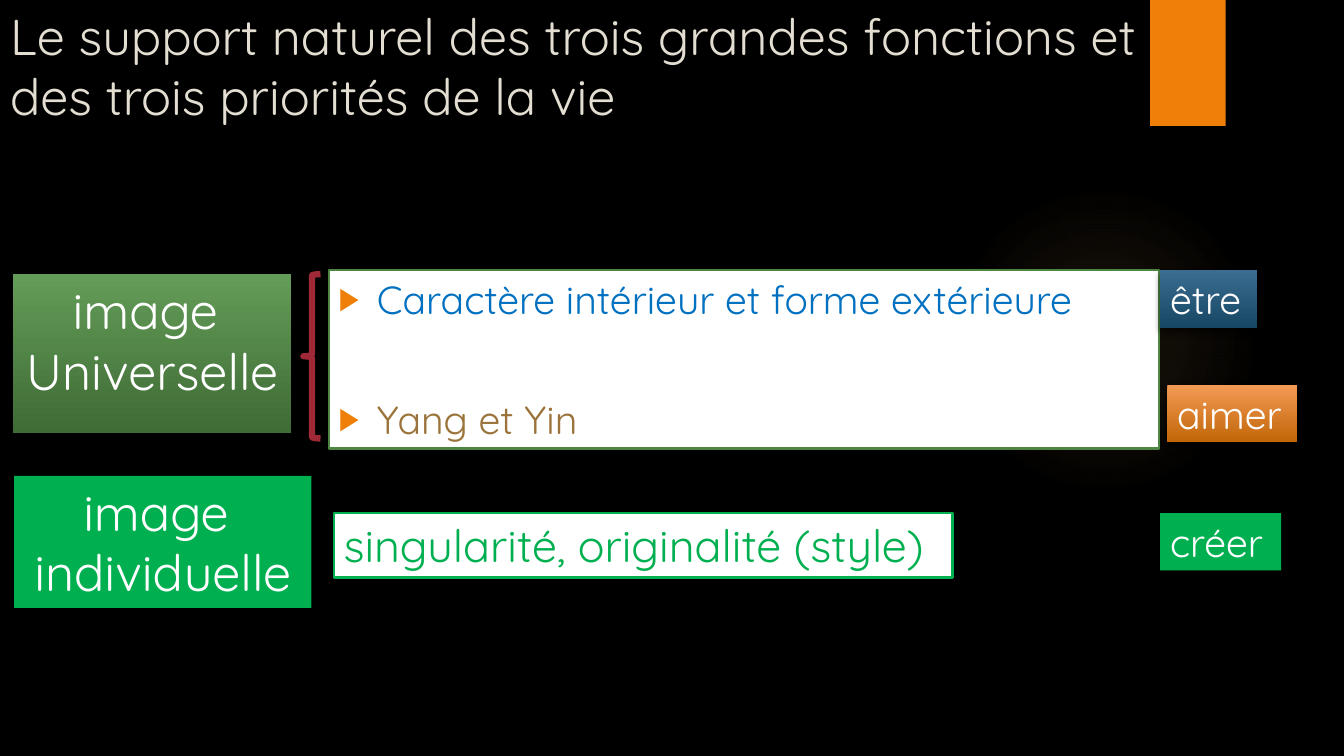
from lxml.etree import SubElement
from pptx import Presentation
from pptx.dml.color import RGBColor
from pptx.enum.shapes import MSO_SHAPE as Preset
from pptx.enum.text import MSO_ANCHOR as Anchor, MSO_AUTO_SIZE as AutoSize, PP_ALIGN as Align
from pptx.oxml import parse_xml
from pptx.oxml.ns import nsdecls, qn
from pptx.util import Inches, Pt

# Grid of squares, 133.3 columns by 75 rows
CELL = Inches(0.1)
COLUMNS, ROWS = 133.33, 75
BADGE_LEFT, BADGE_HEIGHT = 115.1, 5.7
UNIVERSAL_TOP, INDIVIDUAL_TOP = 27.2, 50.9

FONT = "Quicksand"
BLACK = RGBColor(0x00, 0x00, 0x00)
WHITE = RGBColor(0xFF, 0xFF, 0xFF)
CREAM = RGBColor(0xE3, 0xDE, 0xD1)
ORANGE = RGBColor(0xF0, 0x7F, 0x09)
GLOW = RGBColor(0xF9, 0xB2, 0x68)
BLUE = RGBColor(0x00, 0x70, 0xC0)
BROWN = RGBColor(0x9A, 0x74, 0x3A)
GREEN = RGBColor(0x00, 0xB0, 0x50)
LEAF = RGBColor(0x4E, 0x85, 0x42)
RED = RGBColor(0x9F, 0x29, 0x36)
BLUE_FADE = (RGBColor(0x3B, 0x6D, 0x92), RGBColor(0x16, 0x47, 0x63))
ORANGE_FADE = (RGBColor(0xF3, 0x9A, 0x55), RGBColor(0xC1, 0x66, 0x07))
LEAF_FADE = (RGBColor(0x63, 0x9C, 0x58), RGBColor(0x3F, 0x6B, 0x35))


def cells(*counts):
    return [round(count * CELL) for count in counts]


def place(shape, box):
    shape.left, shape.top, shape.width, shape.height = cells(*box)


def paint(shape, fill=None, line=None, line_width=1.5):
    """Fill with one colour or a top-to-bottom fade, and outline."""
    if fill is None:
        shape.fill.background()
    elif isinstance(fill, RGBColor):
        shape.fill.solid()
        shape.fill.fore_color.rgb = fill
    else:
        shape.fill.gradient()
        shape.fill.gradient_angle = 270
        for stop, colour in zip(shape.fill.gradient_stops, fill):
            stop.color.rgb = colour
    if line is None:
        shape.line.fill.background()
    else:
        shape.line.color.rgb = line
        shape.line.width = Pt(line_width)


def add_shadow(shape, opacity, blur, distance):
    effects = shape.element.spPr.find(qn("a:effectLst"))
    shadow = SubElement(effects, qn("a:outerShdw"), blurRad=str(Pt(blur)),
                        dist=str(Pt(distance)), dir="5400000", rotWithShape="0")
    colour = SubElement(shadow, qn("a:srgbClr"), val=str(BLACK))
    SubElement(colour, qn("a:alpha"), val=str(opacity * 1000))


def add_preset(slide, preset, box, fill=None, line=None, line_width=1.5):
    shape = slide.shapes.add_shape(preset, *cells(*box))
    shape.shadow.inherit = False
    paint(shape, fill, line, line_width)
    return shape


def format_text(paragraph, size, colour):
    for run in paragraph.runs:
        run.font.name = FONT
        run.font.size = Pt(size)
        run.font.color.rgb = colour


def add_label(slide, box, text, size, fill, align=Align.LEFT, colour=WHITE, line=None, shadow=True):
    label = add_preset(slide, Preset.RECTANGLE, box, fill, line)
    if shadow:
        add_shadow(label, 60, 5, 3)
    frame = label.text_frame
    frame.text = text
    frame.word_wrap = False
    frame.vertical_anchor = Anchor.TOP
    for paragraph in frame.paragraphs:
        paragraph.alignment = align
        format_text(paragraph, size, colour)


def add_glow(slide, behind):
    glow = add_preset(slide, Preset.OVAL, (94.1, 18.3, 30.8, 30.8))
    stops = "".join(
        f'<a:gs pos="{position}000"><a:srgbClr val="{GLOW}">'
        f'<a:alpha val="{opacity}000"/></a:srgbClr></a:gs>'
        for position, opacity in ((0, 7), (36, 6), (69, 0)))
    gradient = parse_xml(
        f'<a:gradFill {nsdecls("a")}><a:gsLst>{stops}</a:gsLst><a:path path="circle">'
        '<a:fillToRect l="50000" t="50000" r="50000" b="50000"/></a:path></a:gradFill>')
    properties = glow.element.spPr
    properties.replace(properties.find(qn("a:noFill")), gradient)
    behind.element.addprevious(glow.element)


def add_bullet(paragraph):
    properties = paragraph._p.get_or_add_pPr()
    properties.set("marL", str(Inches(0.38)))
    properties.set("indent", str(-Inches(0.38)))
    colour = SubElement(properties, qn("a:buClr"))
    SubElement(colour, qn("a:srgbClr"), val=str(ORANGE))
    SubElement(properties, qn("a:buSzPct"), val="80000")
    SubElement(properties, qn("a:buFont"), typeface="Arial")
    SubElement(properties, qn("a:buChar"), char="▶")


def set_title(title):
    place(title, (0, 0, 113.7, 15.3))
    frame = title.text_frame
    frame.text = "Le support naturel des trois grandes fonctions et des trois priorités de la vie"
    frame.vertical_anchor = Anchor.TOP
    frame.auto_size = AutoSize.NONE
    frame.paragraphs[0].alignment = Align.LEFT
    format_text(frame.paragraphs[0], 36, CREAM)


def set_list(body, items):
    place(body, (32.6, 26.8, 82.4, 17.7))
    paint(body, WHITE, LEAF)
    frame = body.text_frame
    frame.text = "\n".join(text for text, _, _ in items)
    frame.vertical_anchor = Anchor.TOP
    frame.auto_size = AutoSize.NONE
    for paragraph, (_, colour, space) in zip(frame.paragraphs, items):
        add_bullet(paragraph)
        paragraph.space_before = Pt(space)
        format_text(paragraph, 28, colour)


def main():
    presentation = Presentation()
    presentation.slide_width, presentation.slide_height = cells(COLUMNS, ROWS)
    slide = presentation.slides.add_slide(presentation.slide_layouts[1])
    slide.background.fill.solid()
    slide.background.fill.fore_color.rgb = BLACK
    title, body = slide.placeholders

    # Decoration
    add_glow(slide, behind=title)
    tab = add_preset(slide, Preset.RECTANGLE, (114.1, 0, 7.5, 12.5), ORANGE)
    add_shadow(tab, 45, 3, 2)

    # Title and list
    set_title(title)
    set_list(body, [("Caractère intérieur et forme extérieure", BLUE, 0),
                    ("Yang et Yin", BROWN, 52)])

    # The three functions
    add_label(slide, (BADGE_LEFT, 26.8, 9.6, BADGE_HEIGHT), "être", 28, BLUE_FADE)
    add_label(slide, (BADGE_LEFT + 0.7, 38.2, 12.9, BADGE_HEIGHT), "aimer", 28, ORANGE_FADE)
    add_label(slide, (BADGE_LEFT, INDIVIDUAL_TOP, 12, BADGE_HEIGHT), "créer", 28, GREEN,
              shadow=False)

    # The two images
    add_label(slide, (1.3, UNIVERSAL_TOP, 27.6, 15.8), "image \nUniverselle", 36, LEAF_FADE,
              Align.CENTER)
    add_label(slide, (1.4, 47.2, 29.5, 13.1), "image \nindividuelle", 36, GREEN, Align.CENTER)
    brace = add_preset(slide, Preset.LEFT_BRACE, (30.1, UNIVERSAL_TOP, 1.7, 16.3),
                       line=RED, line_width=4.5)
    add_shadow(brace, 45, 3, 2)
    add_label(slide, (33.1, INDIVIDUAL_TOP, 61.4, 6.4), "singularité, originalité (style)", 32,
              WHITE, colour=GREEN, line=GREEN, shadow=False)

    presentation.save("out.pptx")


if __name__ == "__main__":
    main()
